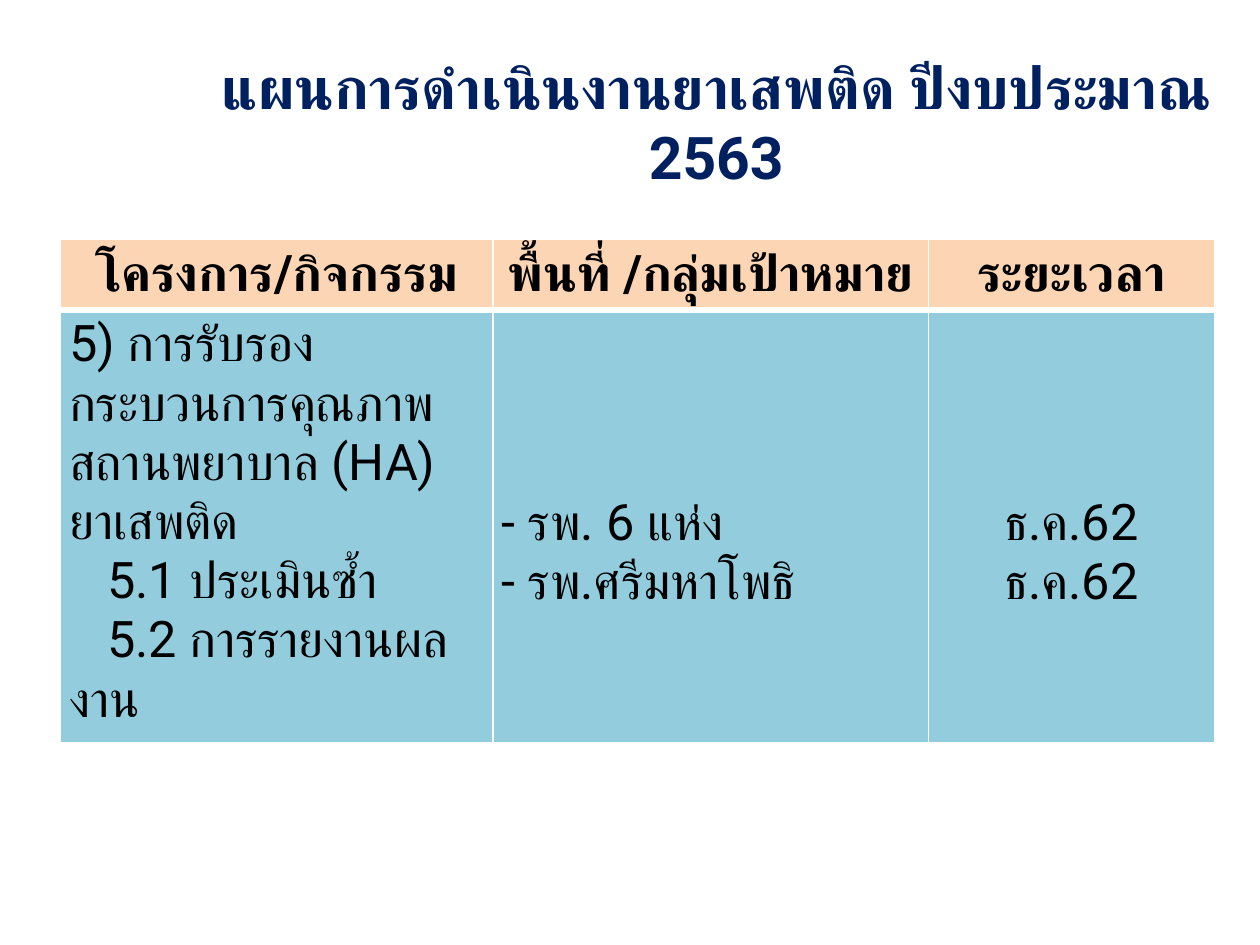
from dataclasses import dataclass

from lxml.etree import SubElement
from pptx import Presentation
from pptx.dml.color import RGBColor
from pptx.enum.text import MSO_ANCHOR, MSO_AUTO_SIZE, PP_ALIGN
from pptx.oxml.ns import qn
from pptx.util import Pt

EMU_PER_PX = 7620  # 120 px to the inch
FONT = "Roboto"
COLORS = {
    "title": "002060",
    "text": "000000",
    "header": "FCD5B5",
    "body": "93CDDD",
    "border": "FFFFFF",
}
TITLE_FORMAT = {"name": FONT, "size": Pt(28), "bold": True}
HEADER_FORMAT = {"name": FONT, "size": Pt(24), "bold": True}
BODY_FORMAT = {"name": FONT, "size": Pt(24), "bold": False}
COLUMN_WIDTHS = (343, 346, 227)
ROW_HEIGHTS = (54, 314)
STEP_INDENT = 30
SCHEDULE_TOP = 146  # sets places and dates level with the numbered steps


@dataclass(frozen=True)
class Line:
    text: str
    indent: int = 0


@dataclass(frozen=True)
class PlanCell:
    lines: tuple[Line, ...]
    align: PP_ALIGN = PP_ALIGN.LEFT
    top_margin: int = 4


HEADERS = tuple(
    PlanCell((Line(heading),), PP_ALIGN.CENTER)
    for heading in ("โครงการ/กิจกรรม", "พื้นที่ /กลุ่มเป้าหมาย", "ระยะเวลา")
)
ACTIVITIES = (
    PlanCell((
        Line("5) การรับรองกระบวนการคุณภาพสถานพยาบาล (HA) ยาเสพติด"),
        Line("5.1 ประเมินซ้ำ", STEP_INDENT),
        Line("5.2 การรายงานผลงาน", STEP_INDENT),
    )),
    PlanCell(
        (Line("- รพ. 6 แห่ง"), Line("- รพ.ศรีมหาโพธิ")),
        top_margin=SCHEDULE_TOP,
    ),
    PlanCell((Line("ธ.ค.62"),) * 2, PP_ALIGN.CENTER, SCHEDULE_TOP),
)


def px(length: int) -> int:
    return length * EMU_PER_PX


def set_attributes(target, values: dict) -> None:
    for name, value in values.items():
        setattr(target, name, value)


def write_lines(frame, lines: tuple[Line, ...], align: PP_ALIGN,
                font_format: dict, color: str) -> None:
    for index, line in enumerate(lines):
        paragraph = frame.add_paragraph() if index else frame.paragraphs[0]
        paragraph.alignment = align
        if line.indent:
            paragraph._p.get_or_add_pPr().set("indent", str(px(line.indent)))
        run = paragraph.add_run()
        run.text = line.text
        set_attributes(run.font, font_format)
        run.font.color.rgb = RGBColor.from_string(COLORS[color])
        # Thai glyphs take the complex-script typeface
        SubElement(run.font._element, qn("a:cs"), typeface=FONT)


def add_borders(cell, widths: dict[str, int]) -> None:
    properties = cell._tc.get_or_add_tcPr()
    for side, width in widths.items():
        border = SubElement(properties, qn(f"a:ln{side}"), w=str(Pt(width)))
        fill = SubElement(border, qn("a:solidFill"))
        SubElement(fill, qn("a:srgbClr"), val=COLORS["border"])


def fill_row(table, row: int, contents: tuple[PlanCell, ...], font_format: dict,
             fill: str, borders: dict[str, int]) -> None:
    for column, content in enumerate(contents):
        cell = table.cell(row, column)
        set_attributes(cell, {
            "margin_left": px(7),
            "margin_right": px(7),
            "margin_top": px(content.top_margin),
            "margin_bottom": px(4),
            "vertical_anchor": MSO_ANCHOR.TOP,
        })
        add_borders(cell, borders)
        cell.fill.solid()
        cell.fill.fore_color.rgb = RGBColor.from_string(COLORS[fill])
        write_lines(cell.text_frame, content.lines, content.align, font_format, "text")


def add_title(slide) -> None:
    title = slide.shapes.title
    set_attributes(title, {
        "left": px(163), "top": px(35), "width": px(811), "height": px(67),
    })
    set_attributes(title.text_frame, {
        "margin_left": px(10),
        "margin_right": px(10),
        "margin_top": px(5),
        "margin_bottom": px(5),
        "vertical_anchor": MSO_ANCHOR.TOP,
        "word_wrap": True,
        "auto_size": MSO_AUTO_SIZE.SHAPE_TO_FIT_TEXT,
    })
    heading = (Line("แผนการดำเนินงานยาเสพติด ปีงบประมาณ 2563"),)
    write_lines(title.text_frame, heading, PP_ALIGN.CENTER, TITLE_FORMAT, "title")


def add_plan_table(slide) -> None:
    plan = slide.shapes.add_table(
        len(ROW_HEIGHTS), len(COLUMN_WIDTHS), px(48), px(190),
        px(sum(COLUMN_WIDTHS)), px(sum(ROW_HEIGHTS)),
    ).table
    plan.horz_banding = False
    for column, width in zip(plan.columns, COLUMN_WIDTHS):
        column.width = px(width)
    for row, height in zip(plan.rows, ROW_HEIGHTS):
        row.height = px(height)
    fill_row(plan, 0, HEADERS, HEADER_FORMAT, "header",
             {"L": 1, "R": 1, "T": 1, "B": 3})
    fill_row(plan, 1, ACTIVITIES, BODY_FORMAT, "body",
             {"L": 1, "R": 1, "T": 3, "B": 1})


def main() -> None:
    presentation = Presentation()
    presentation.slide_width = px(1000)
    presentation.slide_height = px(750)
    slide = presentation.slides.add_slide(presentation.slide_layouts[5])
    add_title(slide)
    add_plan_table(slide)
    presentation.save("out.pptx")


if __name__ == "__main__":
    main()
